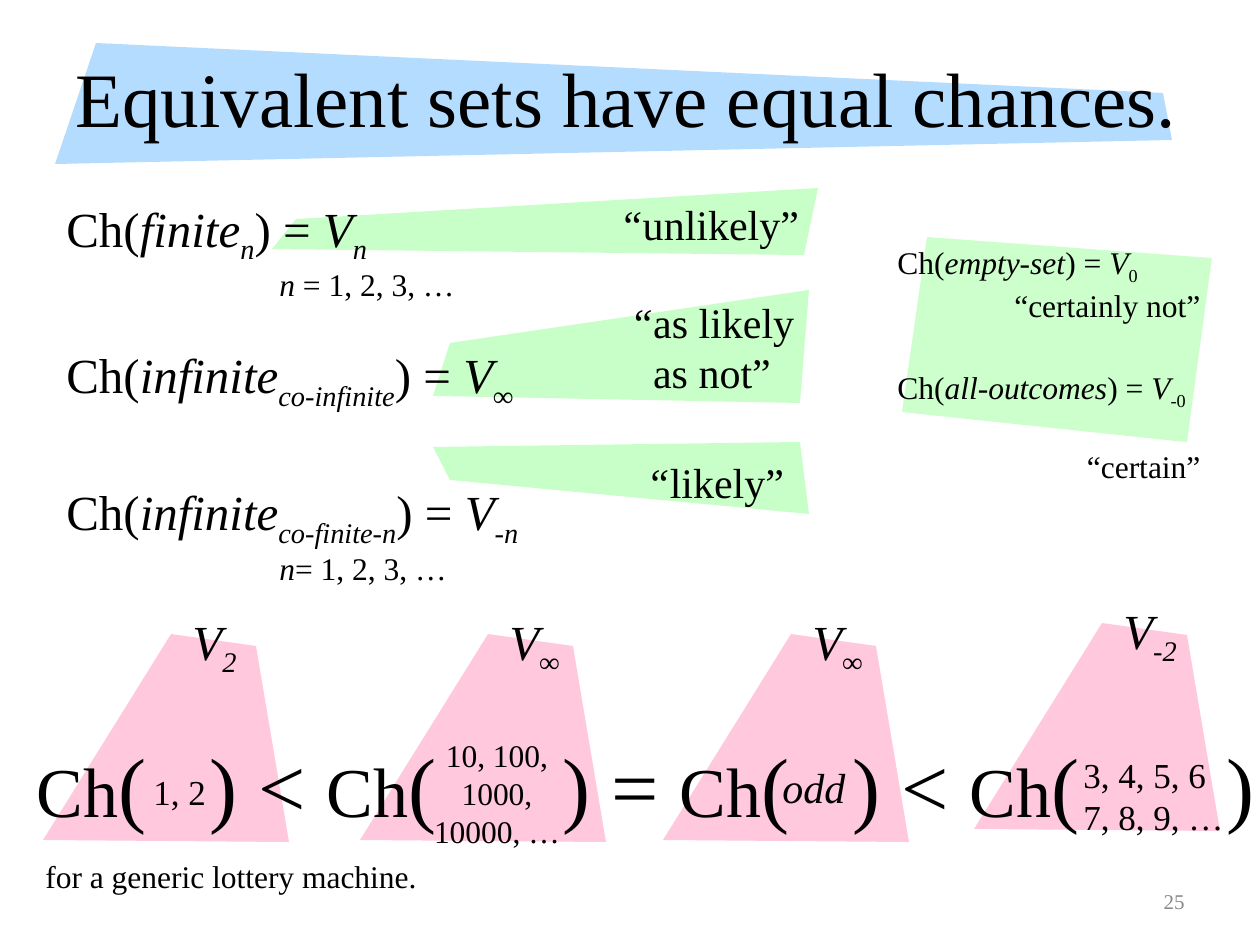
from lxml import etree
from pptx import Presentation
from pptx.dml.color import RGBColor
from pptx.enum.text import MSO_ANCHOR, PP_ALIGN
from pptx.oxml.ns import qn
from pptx.util import Emu, Pt

EMU_PER_PX = 914400 / 126
FONT = "Times New Roman"
BLACK, GREY = "000000", "898989"
BLUE, GREEN, PALE_GREEN, PINK = "B4DCFF", "C8FFC8", "CCFFCC", "FFC8DC"
RIGHT, CENTER = PP_ALIGN.RIGHT, PP_ALIGN.CENTER


def px(value):
    return Emu(round(value * EMU_PER_PX))


def color(hex_string):
    return RGBColor.from_string(hex_string)


def add_polygon(shapes, points, fill):
    builder = shapes.build_freeform(*points[0], scale=EMU_PER_PX)
    builder.add_line_segments(points[1:], close=True)
    polygon = builder.convert_to_shape()
    polygon.shadow.inherit = False
    polygon.fill.solid()
    polygon.fill.fore_color.rgb = color(fill)
    polygon.line.fill.background()


def add_runs(para, runs, size, ink=BLACK):
    """Write (text, style, size) runs; style holds i for italic and s for subscript."""
    for run in runs:
        text, style, run_size = (*run, size)[:3] if isinstance(run, tuple) else (run, "", size)
        if text == "\n":
            para.add_line_break()
            continue
        span = para.add_run()
        span.text = text
        span.font.name = FONT
        span.font.size = Pt(run_size)
        span.font.italic = "i" in style
        span.font.color.rgb = color(ink)
        if "s" in style:
            span.font._element.set("baseline", "-25000")


def add_text(shapes, area, lines, size, align=None, middle=False, ink=BLACK):
    """Add a text box; each line is a list of runs."""
    box = shapes.add_textbox(*map(px, area))
    frame = box.text_frame
    frame.word_wrap = True
    if middle:
        frame.vertical_anchor = MSO_ANCHOR.MIDDLE
    for index, runs in enumerate(lines):
        para = frame.paragraphs[0] if index == 0 else frame.add_paragraph()
        para.alignment = align
        add_runs(para, runs, size, ink)
    return frame.paragraphs


def set_hanging(para, indent):
    props = para._p.get_or_add_pPr()
    props.set("marL", str(px(indent)))
    props.set("indent", str(-px(indent)))


def set_tab_stops(para, positions):
    stops = etree.SubElement(para._p.get_or_add_pPr(), qn("a:tabLst"))
    for position in positions:
        etree.SubElement(stops, qn("a:tab"), pos=str(px(position)), algn="l")


def add_verdict(page, points, area, lines, align=None):
    """Green pointer with a quoted phrase on it."""
    group = page.shapes.add_group_shape()
    add_polygon(group.shapes, points, GREEN)
    add_text(group.shapes, area, lines, 24, align)


def add_value(page, left, top, subscript):
    """Pink pointer with its chance value at the tip."""
    outline = [(128, 0), (213, 12), (246, 208), (0, 206)]
    group = page.shapes.add_group_shape()
    add_polygon(group.shapes, [(left + x, top + y) for x, y in outline], PINK)
    add_text(group.shapes, (left + 137, top - 29, 88, 72),
             [[("V", "i"), (subscript, "is")]], 28)


def add_chances(page):
    def chance(kind, subscript, value):
        return ["Ch(", (kind, "i"), (subscript, "is"), ") = ", ("V", "i"), (value, "is")]

    paras = add_text(page.shapes, (54, 192, 568, 404), [
        chance("finite", "n", "n") + [("\n", ""), ("n ", "i", 18), ("= 1, 2, 3, …", "", 18)],
        chance("infinite", "co-infinite", "∞"),
        chance("infinite", "co-finite-n", "-n")
        + [("\n", ""), ("n", "i", 18), ("= 1, 2, 3, …", "", 18)],
    ], 28)
    for para, gap in zip(paras, (0, 24, 40)):
        set_hanging(para, 213)
        para.space_before = Pt(gap)


def add_extremes(page):
    group = page.shapes.add_group_shape()
    add_polygon(group.shapes,
                [(927, 237), (1212, 258), (1187, 442), (1176, 441), (902, 412)], PALE_GREEN)
    paras = add_text(group.shapes, (885, 237, 328, 192), [
        ["Ch(", ("empty-set", "i"), ") = ", ("V", "i"), ("0", "s")],
        ["“certainly not”"],
        ["Ch(", ("all-outcomes", "i"), ") = ", ("V", "i"), ("-", "is"), ("0", "s")],
        ["“certain”"],
    ], 18)
    for para, gap, align in zip(paras, (0, 0, 25, 21), (None, RIGHT, None, RIGHT)):
        set_hanging(para, 94)
        para.space_before = Pt(gap)
        para.alignment = align


def add_comparison(page):
    shapes = page.shapes.add_group_shape().shapes
    runs = []
    for tail in ("(\t) < ", "(\t) = ", "(\t) < ", "(\t)"):
        runs += [("Ch", "", 40), tail]
    paras = add_text(shapes, (24, 727, 1255, 115), [runs], 48)
    set_tab_stops(paras[0], (173, 526, 816, 1190))
    add_text(shapes, (770, 755, 101, 63), [[("odd", "i")]], 24)
    add_text(shapes, (141, 764, 78, 55), [["1, 2"]], 20)
    add_text(shapes, (1071, 747, 170, 97), [["3, 4, 5, 6"], ["7, 8, 9, …"]], 20)
    add_text(shapes, (417, 730, 160, 127), [["10, 100,"], ["1000,"], ["10000, …"]], 18, CENTER)
    add_text(shapes, (33, 851, 400, 50), [["for a generic lottery machine."]], 18)


def main():
    deck = Presentation()
    deck.slide_width, deck.slide_height = px(1260), px(945)
    page = deck.slides.add_slide(deck.slide_layouts[6])

    add_verdict(page, [(450, 480), (809, 514), (800, 442), (433, 447)],
                (634, 450, 168, 63), [[("“", "i"), "likely”"]])
    add_verdict(page, [(450, 343), (809, 290), (800, 403), (433, 396)],
                (615, 290, 194, 115), [[("“", "i"), "as likely"], ["as not”"]], CENTER)
    add_verdict(page, [(296, 219), (818, 188), (804, 255), (272, 249)],
                (607, 192, 209, 64), [[("“", "i"), "unlikely”"]])

    for left, top, subscript in ((974, 623, "-2"), (663, 634, "∞"),
                                 (360, 634, "∞"), (43, 634, "2")):
        add_value(page, left, top, subscript)

    add_polygon(page.shapes, [(96, 43), (1163, 93), (1172, 140), (55, 164)], BLUE)
    add_text(page.shapes, (63, 38, 1149, 118),
             [["Equivalent sets have equal chances."]], 44, middle=True)
    add_text(page.shapes, (903, 876, 294, 50), [["25"]], 12, RIGHT, middle=True, ink=GREY)

    add_chances(page)
    add_comparison(page)
    add_extremes(page)
    deck.save("out.pptx")


if __name__ == "__main__":
    main()
